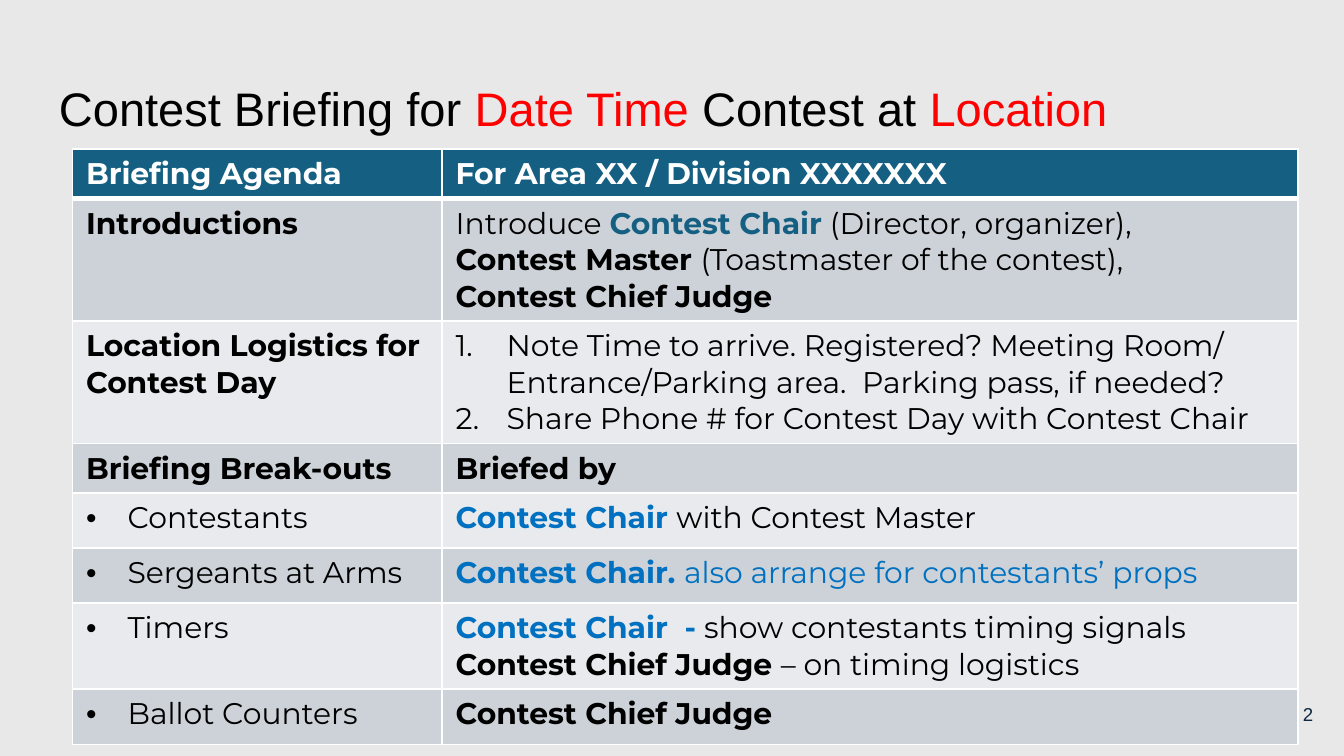
from lxml import etree
from pptx import Presentation
from pptx import util as u
from pptx.dml import color
from pptx.enum import text
from pptx.oxml import ns

INK, RED, WHITE, TEAL, BLUE = "000000", "FF0000", "FFFFFF", "156082", "0070C0"
BANDS = ["E8EAED", "CCD2D8"]
CHAIR = "Contest Chair"
JUDGE = "Contest Chief Judge"

TITLE = [("Contest Briefing for ", INK, False), ("Date Time ", RED, False),
         ("Contest at ", INK, False), ("Location", RED, False)]


def bold(words, tone=INK):
    return (words, tone, True)


def plain(words, tone=INK):
    return (words, tone, False)


def role(name):
    return [[plain(name)]], "bullet"


def cell_text(*paras):
    return list(paras), None


ROWS = [
    (0.37, cell_text([bold("Briefing Agenda", WHITE)]),
     cell_text([bold("For Area XX / Division XXXXXXX", WHITE)])),
    (0.91, cell_text([bold("Introductions")]),
     cell_text([plain("Introduce "), bold(CHAIR, TEAL),
                plain(" (Director, organizer), \n"), bold("Contest Master "),
                plain("(Toastmaster of the contest),\n"), bold(JUDGE)])),
    (0.91, cell_text([bold("Location Logistics for Contest Day")]),
     ([[plain("Note Time to arrive. Registered? Meeting Room/ "
              "Entrance/Parking area.  Parking pass, if needed?")],
       [plain("Share Phone # for Contest Day with Contest Chair")]], "number")),
    (0.37, cell_text([bold("Briefing Break-outs")]),
     cell_text([bold("Briefed by")])),
    (0.41, role("Contestants"),
     cell_text([bold(CHAIR + " ", BLUE), plain("with Contest Master")])),
    (0.41, role("Sergeants at Arms"),
     cell_text([bold(CHAIR + ". ", BLUE),
                plain("also arrange for contestants’ props", BLUE)])),
    (0.64, role("Timers"),
     cell_text([bold(CHAIR + "  -", BLUE),
                plain(" show contestants timing signals")],
               [bold(JUDGE + " "), plain("– on timing logistics")])),
    (0.41, role("Ballot Counters"), cell_text([bold(JUDGE)])),
]


def rgb(tone):
    return color.RGBColor.from_string(tone)


def add_runs(para, runs, size, face):
    for words, tone, heavy in runs:
        for i, part in enumerate(words.split("\n")):
            if i:
                para.add_line_break()
            if part:
                run = para.add_run()
                run.text = part
                run.font.size = u.Pt(size)
                run.font.name = face
                run.font.bold = heavy
                run.font.color.rgb = rgb(tone)


def add_box(slide, spot, runs, size, align, anchor):
    frame = slide.shapes.add_textbox(*map(u.Inches, spot)).text_frame
    frame.word_wrap = True
    frame.vertical_anchor = anchor
    frame.margin_left = frame.margin_right = u.Inches(0.1)
    frame.margin_top = frame.margin_bottom = u.Inches(0.1)
    frame.paragraphs[0].alignment = align
    add_runs(frame.paragraphs[0], runs, size, "Arial")


def add_mark(para, kind):
    indent = u.Inches(0.31 if kind == "bullet" else 0.38)
    props = para._p.get_or_add_pPr()
    props.set("marL", str(indent))
    props.set("indent", str(-indent))
    tint = etree.SubElement(props, ns.qn("a:buClr"))
    etree.SubElement(tint, ns.qn("a:srgbClr"), val=INK)
    if kind == "bullet":
        etree.SubElement(props, ns.qn("a:buFont"), typeface="Arial")
        etree.SubElement(props, ns.qn("a:buChar"), char="•")
    else:
        etree.SubElement(props, ns.qn("a:buFont"), typeface="+mj-lt")
        etree.SubElement(props, ns.qn("a:buAutoNum"), type="arabicPeriod")


def add_edges(cell, widths):
    props = cell._tc.get_or_add_tcPr()
    for side, width in zip("LRTB", widths):
        line = etree.SubElement(props, ns.qn("a:ln" + side), w=str(u.Pt(width)))
        fill = etree.SubElement(line, ns.qn("a:solidFill"))
        etree.SubElement(fill, ns.qn("a:srgbClr"), val=WHITE)


def fill_cell(cell, content, tone, widths):
    paras, kind = content
    add_edges(cell, widths)
    cell.fill.solid()
    cell.fill.fore_color.rgb = rgb(tone)
    frame = cell.text_frame
    for i, runs in enumerate(paras):
        para = frame.add_paragraph() if i else frame.paragraphs[0]
        if kind:
            add_mark(para, kind)
        add_runs(para, runs, 16, "Montserrat")


def add_agenda(slide):
    tall = sum(row[0] for row in ROWS)
    spot = map(u.Inches, (0.54, 1.11, 9.12, tall))
    table = slide.shapes.add_table(len(ROWS), 2, *spot).table
    for col, width in zip(table.columns, (2.75, 6.37)):
        col.width = u.Inches(width)
    for r, (height, *cells) in enumerate(ROWS):
        table.rows[r].height = u.Inches(height)
        tone = BANDS[r % 2] if r else TEAL
        widths = (1, 1, 3 if r == 1 else 1, 1 if r else 3)
        for c, content in enumerate(cells):
            fill_cell(table.cell(r, c), content, tone, widths)


def main():
    deck = Presentation()
    deck.slide_width = u.Inches(10)
    deck.slide_height = deck.slide_width * 9 // 16
    slide = deck.slides.add_slide(deck.slide_layouts[6])
    slide.background.fill.solid()
    slide.background.fill.fore_color.rgb = rgb("E8E8E8")
    add_box(slide, (0.34, 0.49, 9.32, 0.63), TITLE, 25.2,
            text.PP_ALIGN.LEFT, text.MSO_ANCHOR.TOP)
    add_agenda(slide)
    add_box(slide, (9.27, 5.1, 0.6, 0.43), [plain("2", "0E2841")], 10,
            text.PP_ALIGN.RIGHT, text.MSO_ANCHOR.MIDDLE)
    deck.save("out.pptx")


if __name__ == "__main__":
    main()
